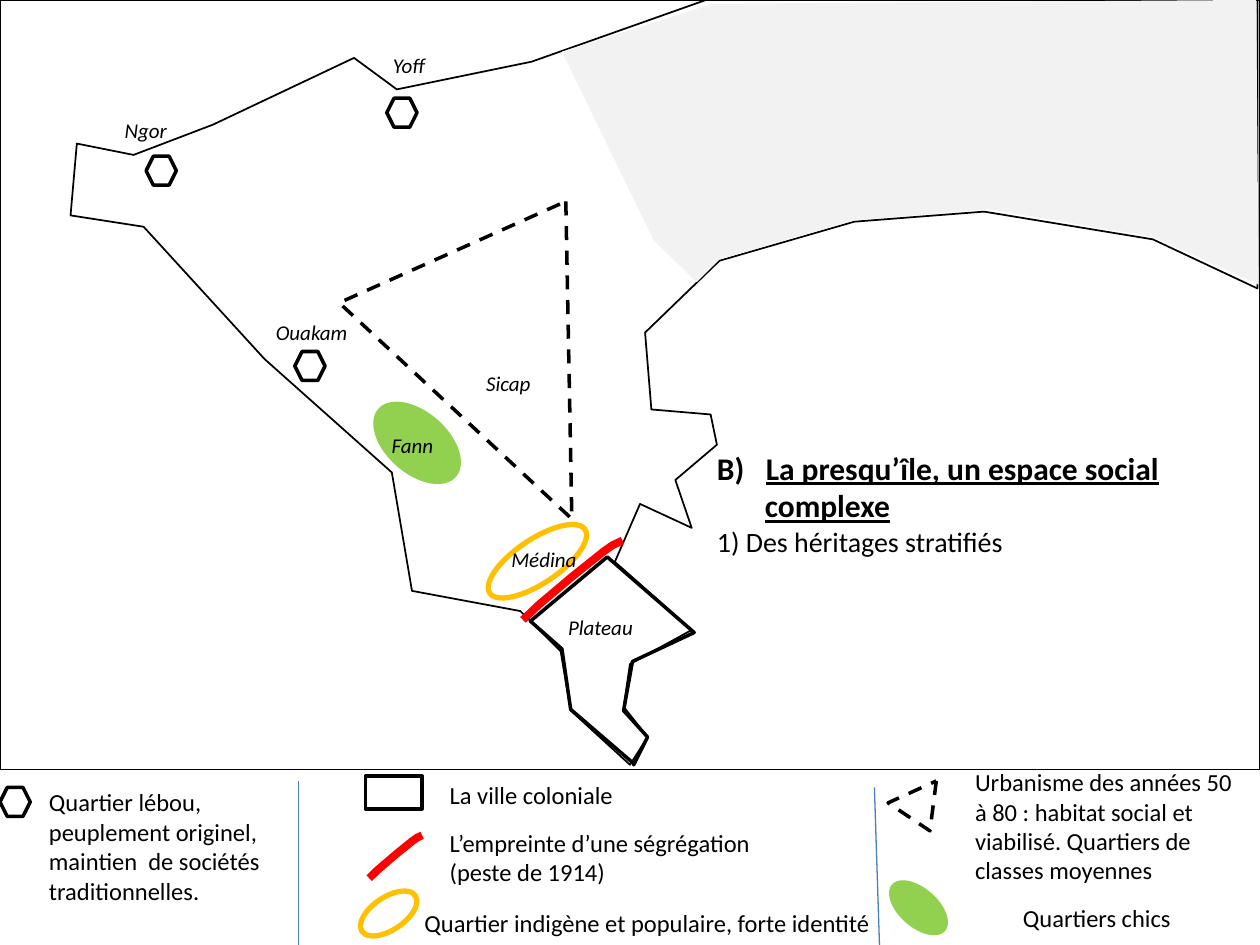
from pptx import Presentation
from pptx.dml.color import RGBColor
from pptx.enum.dml import MSO_LINE
from pptx.enum.shapes import MSO_CONNECTOR, MSO_SHAPE
from pptx.enum.text import MSO_ANCHOR, MSO_AUTO_SIZE, PP_ALIGN
from pptx.oxml.ns import qn
from pptx.util import Inches, Pt
from lxml import etree

RECTANGLE, TRIANGLE = MSO_SHAPE.RECTANGLE, MSO_SHAPE.ISOSCELES_TRIANGLE
HEXAGON, OVAL = MSO_SHAPE.HEXAGON, MSO_SHAPE.OVAL
DASH, STRAIGHT = MSO_LINE.DASH, MSO_CONNECTOR.STRAIGHT
LEFT, TOP = PP_ALIGN.LEFT, MSO_ANCHOR.TOP
NO_AUTOFIT, GROW = MSO_AUTO_SIZE.NONE, MSO_AUTO_SIZE.SHAPE_TO_FIT_TEXT

FONT = "Calibri"
BLACK, GREY, RED = "000000", "F2F2F2", "FF0000"
ORANGE, GREEN, BLUE = "FFC000", "92D050", "4B7EBC"
WIDTH, HEIGHT, MAP_HEIGHT = 10, 7.5, 6.11

# Outlines of the map, in inches
PENINSULA = [
    (0.61, 1.14), (0.56, 1.71), (1.14, 1.8), (2.1, 2.85), (3.11, 3.75), (3.27, 4.69),
    (4.13, 4.85), (4.45, 5.17), (4.53, 5.64), (5, 6.07), (5.14, 5.85), (4.95, 5.61),
    (5, 5.27), (5.49, 5), (4.88, 4.46), (5.08, 4), (5.49, 4.19), (5.36, 3.81),
    (5.69, 3.53), (5.64, 3.29), (5.17, 3.25), (5.12, 2.64), (5.71, 2.07), (6.78, 1.76),
    (7.81, 1.68), (9.15, 1.9), (9.98, 2.29), (9.98, -0.03), (5.66, -0.02), (4.22, 0.49),
    (3.15, 0.71), (2.81, 0.46), (1.69, 0.99), (1.06, 1.23)]
PLATEAU = [
    (4.21, 4.93), (4.82, 4.42), (5.51, 5.02), (5.02, 5.25), (4.95, 5.64), (5.14, 5.85),
    (5.03, 6.07), (5.03, 6.06), (4.53, 5.63), (4.46, 5.15)]
SUBURBS = [
    (4.46, 0.41), (5.19, 1.91), (5.53, 2.24), (5.71, 2.06), (6.78, 1.75), (7.84, 1.66),
    (9.15, 1.88), (9.99, 2.26), (9.97, 0), (5.66, 0.03)]

# Segregation line: shares of its box; each used on the map and in the legend
BARRIER = [(0, 1), (0.16, 0.81), (0.33, 0.63), (0.5, 0.45), (0.67, 0.28),
           (0.81, 0.14), (0.9, 0.06), (1, 0)]
BARRIER_BOXES = [(4.15, 4.29, 0.79, 0.63), (2.93, 6.63, 0.42, 0.34)]

# Symbols: kind, box, rotation, line colour, line width, fill
HEXAGON_CORNERS = [(1.16, 1.24), (3.07, 0.78), (2.34, 2.79), (0, 6.25)]
SYMBOLS = [
    (RECTANGLE, (2.9, 6.16, 0.45, 0.26), 0, BLACK, 2, None),
    (TRIANGLE, (3.08, 1.9, 1.97, 2.32), 155.9, BLACK, 2, None),
    (TRIANGLE, (7.1, 6.27, 0.42, 0.34), 155.6, BLACK, 2, None),
    *[(HEXAGON, (x, y, 0.24, 0.23), 0, BLACK, 2, None) for x, y in HEXAGON_CORNERS],
    (OVAL, (3.81, 4.28, 0.91, 0.35), 326.2, ORANGE, 3, None),
    (OVAL, (2.83, 7.12, 0.51, 0.26), 326.2, ORANGE, 3, None),
    (OVAL, (2.9, 3.27, 0.82, 0.49), 41.2, None, 0, GREEN),
    (OVAL, (7.01, 7.05, 0.56, 0.31), 41.2, None, 0, GREEN)]
DIVIDERS = [(2.37, 6.2, 2.37, HEIGHT), (6.94, 6.25, 6.98, HEIGHT)]

# Texts: wording, box
PLACES = [
    ("Plateau", (4.41, 4.83, 0.75, 0.3)), ("Sicap", (3.76, 2.89, 0.56, 0.3)),
    ("Ngor", (0.89, 0.88, 0.54, 0.3)), ("Yoff", (3.02, 0.37, 0.46, 0.3)),
    ("Ouakam", (2.09, 2.49, 0.78, 0.3)), ("Médina", (3.96, 4.29, 0.72, 0.3)),
    ("Fann", (3.01, 3.38, 0.53, 0.3))]
LEGEND_LINES = [
    ("La ville coloniale", (3.47, 6.14, 1.56, 0.34)),
    ("Quartier indigène et populaire, forte identité", (3.27, 7.16, 3.78, 0.34)),
    ("Quartiers chics", (8.02, 7.12, 1.39, 0.34))]
LEGEND_BLOCKS = [
    ("Quartier lébou,  peuplement originel, maintien  de sociétés traditionnelles.",
     (0.29, 6.2, 2.43, 1.04)),
    ("L’empreinte d’une ségrégation (peste de 1914)", (3.47, 6.52, 2.64, 0.57)),
    ("Urbanisme des années 50 à 80 : habitat social et viabilisé. Quartiers de classes moyennes",
     (7.64, 6.04, 2.36, 1.04))]
HEADING_BOX = (5.59, 3.51, 4.69, 1.01)
# Heading paragraphs: hanging indent, then runs of wording, size, bold, underlined
HEADING = [
    (0.38, [("B)   ", 18, True, False),
            ("La presqu’île, un espace social complexe", 18, True, True)]),
    (0, [("1) Des héritages stratifiés", 16, False, False)])]


def color(value):
    return RGBColor.from_string(value)


def inches(values):
    return [Inches(value) for value in values]


def style(shape, line=None, width=0, fill=None):
    shape.shadow.inherit = False
    if fill:
        shape.fill.solid()
        shape.fill.fore_color.rgb = color(fill)
    else:
        shape.fill.background()
    if line:
        shape.line.color.rgb = color(line)
        shape.line.width = Pt(width)
    else:
        shape.line.fill.background()


def add_outline(slide, points, close=True, **look):
    start, *others = [inches(point) for point in points]
    builder = slide.shapes.build_freeform(*start, scale=1.0)
    builder.add_line_segments(others, close=close)
    style(builder.convert_to_shape(), **look)


def add_symbol(slide, kind, box, rotation, line, width, fill):
    shape = slide.shapes.add_shape(kind, *inches(box))
    shape.rotation = rotation
    style(shape, line, width, fill)
    if kind == TRIANGLE:
        shape.line.dash_style = DASH


def add_divider(slide, ends):
    connector = slide.shapes.add_connector(STRAIGHT, *inches(ends))
    connector.line.color.rgb = color(BLUE)
    connector.line.width = Pt(0.75)
    etree.SubElement(connector._element.spPr, qn("a:effectLst"))


def add_run(paragraph, text, size, bold=False, italic=False, underline=False):
    run = paragraph.add_run()
    run.text = text
    font = run.font
    font.name, font.size, font.color.rgb = FONT, Pt(size), color(BLACK)
    font.bold, font.italic, font.underline = bold, italic, underline


def add_text(slide, text, box, size, italic=False, wrap=False):
    frame = slide.shapes.add_textbox(*inches(box)).text_frame
    frame.word_wrap, frame.auto_size = wrap, GROW
    add_run(frame.paragraphs[0], text, size, italic=italic)


def fill_heading(title):
    title.left, title.top, title.width, title.height = inches(HEADING_BOX)
    frame = title.text_frame
    frame.word_wrap, frame.auto_size, frame.vertical_anchor = True, NO_AUTOFIT, TOP
    for index, (indent, runs) in enumerate(HEADING):
        paragraph = frame.add_paragraph() if index else frame.paragraphs[0]
        paragraph.alignment = LEFT
        properties = paragraph._p.get_or_add_pPr()
        properties.set("marL", str(Inches(indent)))
        properties.set("indent", str(-Inches(indent)))
        for text, size, bold, underline in runs:
            add_run(paragraph, text, size, bold=bold, underline=underline)


def main():
    presentation = Presentation()
    presentation.slide_width, presentation.slide_height = inches((WIDTH, HEIGHT))
    slide = presentation.slides.add_slide(presentation.slide_layouts[5])
    fill_heading(slide.shapes.title)

    # Map
    add_outline(slide, PENINSULA, line=BLACK, width=1)
    add_symbol(slide, RECTANGLE, (0, 0, WIDTH, MAP_HEIGHT), 0, BLACK, 0.75, None)
    add_outline(slide, PLATEAU, line=BLACK, width=2)
    add_outline(slide, SUBURBS, fill=GREY)

    # Symbols of the map and the legend
    for symbol in SYMBOLS:
        add_symbol(slide, *symbol)
    for left, top, width, height in BARRIER_BOXES:
        points = [(left + x * width, top + y * height) for x, y in BARRIER]
        add_outline(slide, points, close=False, line=RED, width=4.5)
    for ends in DIVIDERS:
        add_divider(slide, ends)

    # Place names and legend wording
    for text, box in PLACES:
        add_text(slide, text, box, 12, italic=True)
    for text, box in LEGEND_LINES:
        add_text(slide, text, box, 14)
    for text, box in LEGEND_BLOCKS:
        add_text(slide, text, box, 14, wrap=True)

    presentation.save("out.pptx")


if __name__ == "__main__":
    main()
